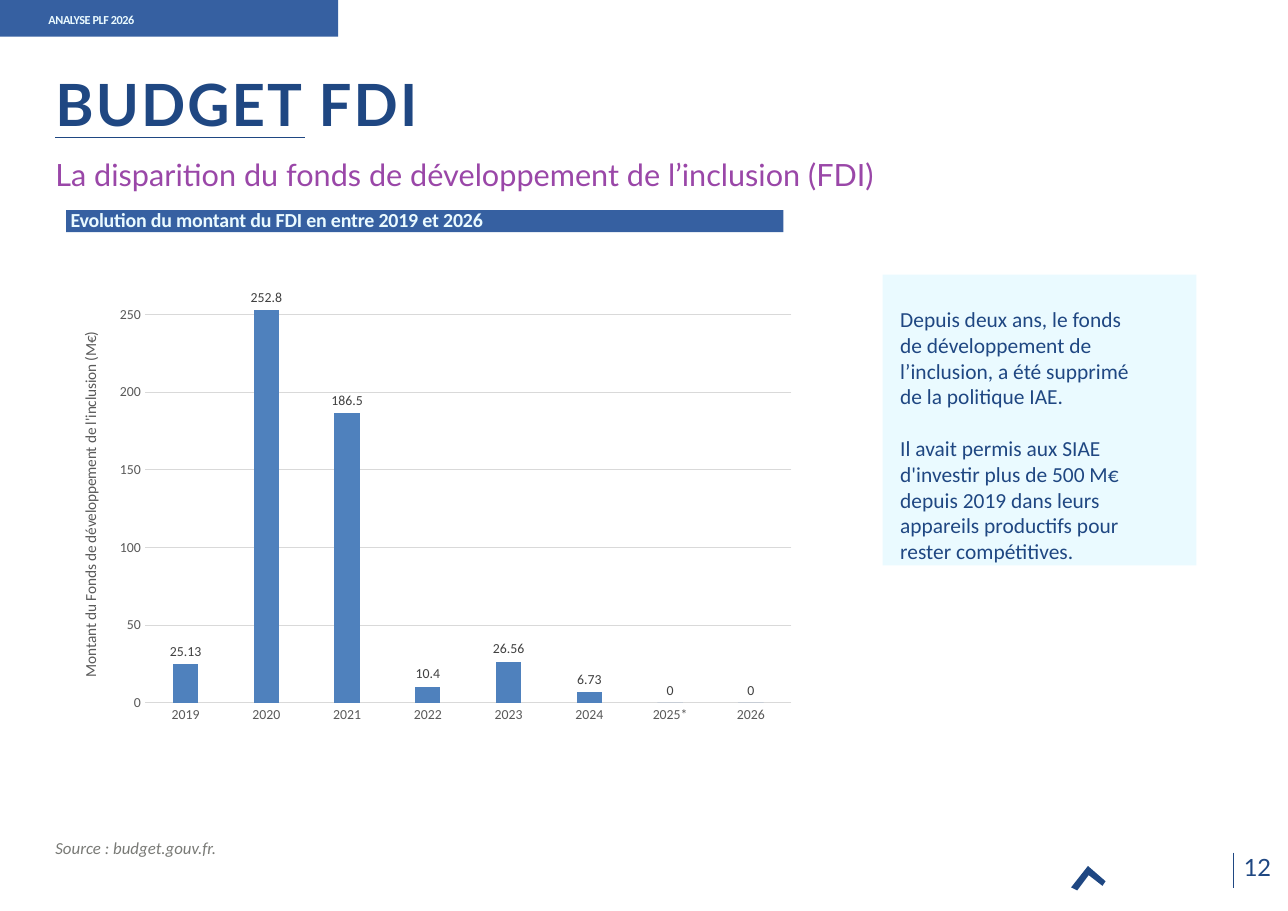
from dataclasses import dataclass
from lxml import etree
from pptx import Presentation
from pptx.chart.data import CategoryChartData
from pptx.dml.color import RGBColor
from pptx.enum.chart import XL_CHART_TYPE, XL_LABEL_POSITION, XL_TICK_MARK
from pptx.enum.shapes import MSO_CONNECTOR, MSO_SHAPE
from pptx.enum.text import MSO_ANCHOR, MSO_AUTO_SIZE, PP_ALIGN
from pptx.oxml import parse_xml
from pptx.oxml.ns import nsdecls, qn
from pptx.util import Pt


@dataclass(frozen=True)
class Theme:
    navy: str = "1F4782"
    blue: str = "3660A1"
    purple: str = "9A47A8"
    pale: str = "EAFAFF"
    grey: str = "797A76"
    bar: str = "4F81BD"
    grid: str = "D9D9D9"
    axis: str = "595959"
    label: str = "404040"
    head: str = "Lato"
    body: str = "Calibri"
    title: float = 38
    subtitle: float = 20
    page: float = 15.5
    text: float = 14
    banner: float = 13
    source: float = 11
    axis_title: float = 10
    tick: float = 9
    tag: float = 8


T = Theme()


def write(sp, text, size, color, font=T.body, bold=False, italic=False,
          spc=0, margins=(0, 0, 0, 0), line=None, gap=0):
    tf = sp.text_frame
    tf.word_wrap = True
    tf.auto_size = MSO_AUTO_SIZE.NONE
    tf.vertical_anchor = MSO_ANCHOR.TOP
    tf.margin_left, tf.margin_top, tf.margin_right, tf.margin_bottom = map(Pt, margins)
    for i, part in enumerate(text.split("\n")):
        p = tf.add_paragraph() if i else tf.paragraphs[0]
        p.alignment = PP_ALIGN.LEFT
        p.space_before = Pt(gap if i else 0)
        if line:
            p.line_spacing = Pt(line)
        r = p.add_run()
        r.text = part
        r.font.name, r.font.size = font, Pt(size)
        r.font.bold, r.font.italic = bold, italic
        r.font.color.rgb = RGBColor.from_string(color)
        if spc:
            r._r.get_or_add_rPr().set("spc", str(round(spc * 100)))


def paint(sp, color):
    sp.shadow.inherit = False
    sp.fill.solid()
    sp.fill.fore_color.rgb = RGBColor.from_string(color)
    sp.line.fill.background()


prs = Presentation()
prs.slide_width, prs.slide_height = Pt(841.7), Pt(595.4)
s = prs.slides.add_slide(prs.slide_layouts[5])

rects = []
for box, color in [
    ((0, 0, 221, 24), T.blue),
    ((43.2, 137.4, 468.7, 14.4), T.blue),
    ((576.8, 179.5, 205, 190), T.pale),
]:
    sp = s.shapes.add_shape(MSO_SHAPE.RECTANGLE, *map(Pt, box))
    paint(sp, color)
    rects.append(sp)
tag, banner, note = rects

title = s.shapes.title
title.left, title.top, title.width, title.height = map(Pt, (35.5, 32.4, 694, 55.5))
write(title, "BUDGET FDI", T.title, T.navy, font=T.head, bold=True, spc=1.4,
      margins=(0.7, 10, 0, 0), line=47.6)

write(tag, "ANALYSE PLF 2026", T.tag, T.pale, bold=True, spc=-0.3, margins=(31.7, 8.3, 0, 0))
write(banner, "Evolution du montant du FDI en entre 2019 et 2026", T.banner, T.pale,
      bold=True, spc=-0.1, margins=(2.9, 0, 0, 0), line=14.1)
write(note, "Depuis deux ans, le fonds de développement de l’inclusion, a été supprimé "
      "de la politique IAE.\nIl avait permis aux SIAE d'investir plus de 500 M€ depuis 2019 "
      "dans leurs appareils productifs pour rester compétitives.",
      T.text, T.navy, margins=(11.5, 20.7, 38, 0), gap=17)

for box, text, fmt in [
    ((35.5, 100.8, 572, 25.2), "La disparition du fonds de développement de l’inclusion (FDI)",
     dict(size=T.subtitle, color=T.purple, font=T.head, margins=(0.7, 1, 0, 0))),
    ((35.5, 546.5, 202, 14.4), "Source : budget.gouv.fr.",
     dict(size=T.source, color=T.grey, italic=True, margins=(0.7, 1, 0, 0))),
    ((810, 557.3, 23, 21), "12",
     dict(size=T.page, color=T.navy, font=T.head, spc=-0.2, margins=(2.9, 0, 0, 0))),
]:
    write(s.shapes.add_textbox(*map(Pt, box)), text, **fmt)

for ends, width in [((36, 90, 199.4, 90), 0.63), ((806, 557.3, 806, 580.3), 0.4)]:
    rule = s.shapes.add_connector(MSO_CONNECTOR.STRAIGHT, *map(Pt, ends))
    rule.line.color.rgb = RGBColor.from_string(T.navy)
    rule.line.width = Pt(width)
    etree.SubElement(rule._element.spPr, qn("a:effectLst"))

points = [(711, 566), (722.5, 576), (720.5, 579), (711.5, 572), (704, 582), (700, 580)]
start, *rest = [(Pt(x), Pt(y)) for x, y in points]
fb = s.shapes.build_freeform(*start, scale=1.0)
fb.add_line_segments(rest, close=True)
paint(fb.convert_to_shape(), T.navy)

data = CategoryChartData()
data.categories = ["2019", "2020", "2021", "2022", "2023", "2024", "2025*", "2026"]
data.add_series("FDI (M€)", [25.13, 252.8, 186.5, 10.4, 26.56, 6.73, 0, 0])
chart = s.shapes.add_chart(XL_CHART_TYPE.COLUMN_CLUSTERED,
                           *map(Pt, (36, 179.3, 491, 298)), data).chart
chart.has_legend = False
chart.has_title = False
chart.font.name, chart.font.size = T.body, Pt(T.axis_title)

plot = chart.plots[0]
plot.gap_width, plot.overlap, plot.vary_by_categories = 219, -27, False
bars = plot.series[0]
bars.format.fill.solid()
bars.format.fill.fore_color.rgb = RGBColor.from_string(T.bar)
labels = bars.data_labels
labels.show_value = True
labels.position = XL_LABEL_POSITION.OUTSIDE_END

cat, val = chart.category_axis, chart.value_axis
for part, color in [(cat.tick_labels, T.axis), (val.tick_labels, T.axis), (labels, T.label)]:
    part.font.name, part.font.size = T.body, Pt(T.tick)
    part.font.color.rgb = RGBColor.from_string(color)
    part.number_format, part.number_format_is_linked = "General", False
for axis in (cat, val):
    axis.major_tick_mark = axis.minor_tick_mark = XL_TICK_MARK.NONE
val.minimum_scale, val.maximum_scale, val.major_unit = 0, 270, 50
val.has_major_gridlines = True
val.format.line.fill.background()
for line in (cat.format.line, val.major_gridlines.format.line):
    line.color.rgb = RGBColor.from_string(T.grid)
    line.width = Pt(0.75)

tf = val.axis_title.text_frame
tf.text = "Montant du Fonds de développement de l'inclusion (M€)"
tf._txBody.bodyPr.set("rot", "-5400000")
tf._txBody.bodyPr.set("vert", "horz")
r = tf.paragraphs[0].runs[0]
r.font.name, r.font.size, r.font.bold = T.body, Pt(T.axis_title), False
r.font.color.rgb = RGBColor.from_string(T.axis)

plot_area = chart._chartSpace.chart.plotArea
for parent, spot in [
    (plot_area, dict(layoutTarget="inner", xMode="edge", yMode="edge", x=0.12, y=0.02, w=0.86, h=0.92)),
    (val.axis_title._element, dict(xMode="edge", yMode="edge", x=0.03, y=0.12)),
]:
    for old in parent.findall(qn("c:layout")):
        parent.remove(old)
    fields = "".join(f'<c:{k} val="{v}"/>' for k, v in spot.items())
    layout = parse_xml(f'<c:layout {nsdecls("c")}><c:manualLayout>{fields}</c:manualLayout></c:layout>')
    parent.insert(0 if parent is plot_area else 1, layout)

prs.save("out.pptx")
